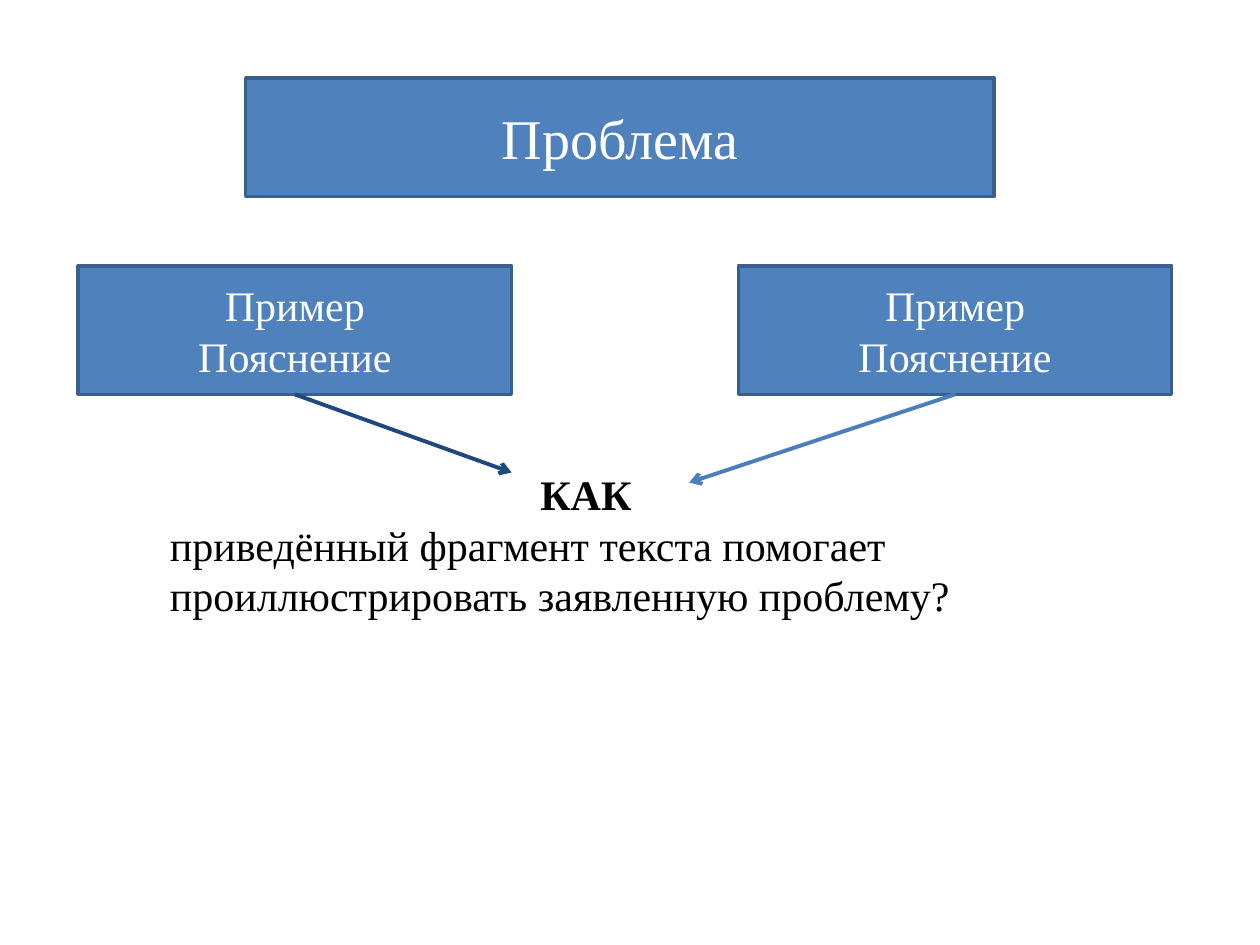
from dataclasses import dataclass

from lxml import etree
from pptx import Presentation
from pptx.dml.color import RGBColor
from pptx.enum.shapes import MSO_CONNECTOR, MSO_SHAPE
from pptx.enum.text import MSO_ANCHOR, MSO_AUTO_SIZE, PP_ALIGN
from pptx.oxml.ns import qn
from pptx.slide import Slide
from pptx.util import Inches, Pt

RECTANGLE = MSO_SHAPE.RECTANGLE
STRAIGHT = MSO_CONNECTOR.STRAIGHT
MIDDLE = MSO_ANCHOR.MIDDLE
FIT_SHAPE = MSO_AUTO_SIZE.SHAPE_TO_FIT_TEXT
LEFT, CENTER = PP_ALIGN.LEFT, PP_ALIGN.CENTER

FONT = "Times New Roman"
COLORS = {
    "box": "4F81BD",
    "border": "3A5F8C",
    "box_text": "FFFFFF",
    "text": "000000",
    "left_arrow": "1F497D",
    "right_arrow": "4B7EBC",
}


@dataclass
class Box:
    left: float
    top: float
    width: float
    height: float
    lines: tuple[str, ...]
    size: int


@dataclass
class Arrow:
    source: Box
    tip: tuple[float, float]
    color: str


def color(key: str) -> RGBColor:
    return RGBColor.from_string(COLORS[key])


def write_line(paragraph, text: str, size: int, color_key: str,
               align=CENTER, bold: bool = False) -> None:
    paragraph.text = text
    paragraph.alignment = align
    font = paragraph.font
    font.name, font.size, font.bold = FONT, Pt(size), bold
    font.color.rgb = color(color_key)


def draw_box(slide: Slide, box: Box) -> None:
    shape = slide.shapes.add_shape(
        RECTANGLE, Inches(box.left), Inches(box.top),
        Inches(box.width), Inches(box.height))
    shape.shadow.inherit = False
    shape.fill.solid()
    shape.fill.fore_color.rgb = color("box")
    shape.line.color.rgb = color("border")
    shape.line.width = Pt(2)
    frame = shape.text_frame
    frame.vertical_anchor = MIDDLE
    for index, text in enumerate(box.lines):
        paragraph = frame.add_paragraph() if index else frame.paragraphs[0]
        write_line(paragraph, text, box.size, "box_text")


def draw_arrow(slide: Slide, arrow: Arrow) -> None:
    """Draw an arrow from the bottom centre of its source box."""
    box = arrow.source
    connector = slide.shapes.add_connector(
        STRAIGHT, Inches(box.left + box.width / 2),
        Inches(box.top + box.height), *map(Inches, arrow.tip))
    connector.line.color.rgb = color(arrow.color)
    connector.line.width = Pt(2.25)
    properties = connector._element.spPr
    etree.SubElement(properties.find(qn("a:ln")), qn("a:tailEnd"), type="arrow")
    etree.SubElement(properties, qn("a:effectLst"))


def draw_question(slide: Slide) -> None:
    textbox = slide.shapes.add_textbox(
        Inches(1.25), Inches(3.67), Inches(6.8), Inches(1.31))
    frame = textbox.text_frame
    frame.word_wrap = True
    frame.auto_size = FIT_SHAPE
    write_line(frame.paragraphs[0], "КАК", 24, "text", bold=True)
    write_line(
        frame.add_paragraph(),
        "приведённый фрагмент текста помогает "
        "проиллюстрировать заявленную проблему?",
        24, "text", align=LEFT)


def main() -> None:
    presentation = Presentation()
    presentation.slide_width = Inches(10)
    presentation.slide_height = Inches(7.5)
    slide = presentation.slides.add_slide(presentation.slide_layouts[6])

    # Problem and its two examples
    problem = Box(1.95, 0.62, 5.94, 0.94, ("Проблема",), 32)
    left_example, right_example = (
        Box(left, 2.11, 3.44, 1.02, ("Пример", "Пояснение"), 24)
        for left in (0.62, 5.86))
    for box in (problem, left_example, right_example):
        draw_box(slide, box)

    # Question the examples lead to
    draw_question(slide)
    for arrow in (Arrow(left_example, (4.06, 3.75), "left_arrow"),
                  Arrow(right_example, (5.47, 3.83), "right_arrow")):
        draw_arrow(slide, arrow)

    presentation.save("out.pptx")


if __name__ == "__main__":
    main()
